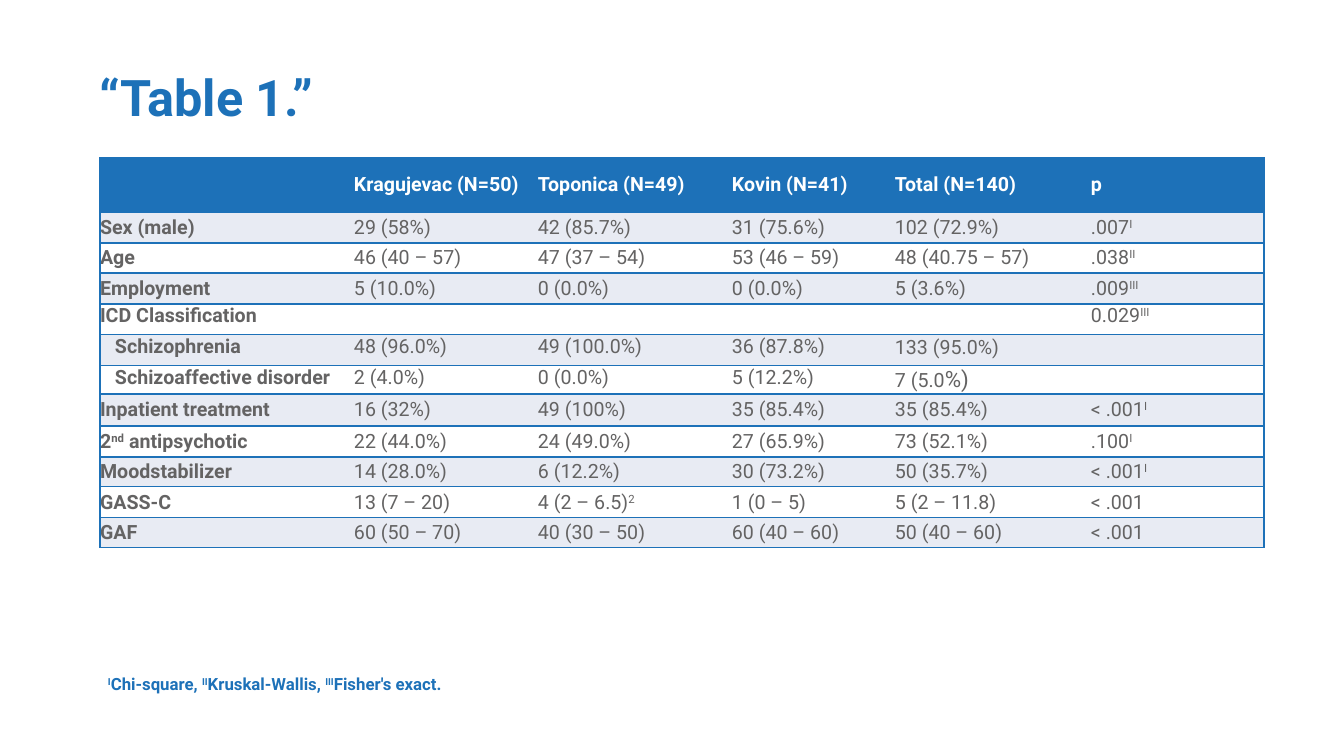
from dataclasses import dataclass

from lxml import etree
from pptx import Presentation
from pptx.dml.color import RGBColor
from pptx.enum.text import MSO_ANCHOR
from pptx.oxml.ns import qn
from pptx.util import Emu, Pt

TOP = MSO_ANCHOR.TOP
MIDDLE = MSO_ANCHOR.MIDDLE

EMU_PER_PX = 914400 / 100.8
FONT = "Roboto"
BLUE = "1D71B8"
GREY = "646363"
WHITE = "FFFFFF"
PALE = "E8EBF3"
SUPERSCRIPT = "^"
ENLARGED = "|"


@dataclass(frozen=True)
class Measure:
    label: str
    values: tuple[str, ...]
    height: int
    anchor: MSO_ANCHOR = MIDDLE
    indent: int = 0


COLUMN_WIDTHS = (254, 184, 194, 162, 197, 173)
TOTAL_COLUMN = 4

MEASURES = (
    Measure("", ("Kragujevac (N=50)", "Toponica (N=49)", "Kovin (N=41)", "Total (N=140)", "p"), 54),
    Measure("Sex (male)", ("29 (58%)", "42 (85.7%)", "31 (75.6%)", "102 (72.9%)", ".007^I"), 31),
    Measure("Age", ("46 (40 – 57)", "47 (37 – 54)", "53 (46 – 59)", "48 (40.75 – 57)", ".038^II"), 30),
    Measure("Employment", ("5 (10.0%)", "0 (0.0%)", "0 (0.0%)", "5 (3.6%)", ".009^III"), 31),
    Measure("ICD Classification", ("", "", "", "", "0.029^III"), 31, TOP),
    Measure("Schizophrenia", ("48 (96.0%)", "49 (100.0%)", "36 (87.8%)", "133 (95.0%)", ""), 31, TOP, 15),
    Measure("Schizoaffective disorder", ("2 (4.0%)", "0 (0.0%)", "5 (12.2%)", "7 (5.0|%)", ""), 28, TOP, 15),
    Measure("Inpatient treatment", ("16 (32%)", "49 (100%)", "35 (85.4%)", "35 (85.4%)", "< .001^I"), 32),
    Measure("2^nd^ antipsychotic", ("22 (44.0%)", "24 (49.0%)", "27 (65.9%)", "73 (52.1%)", ".100^I"), 31),
    Measure("Moodstabilizer", ("14 (28.0%)", "6 (12.2%)", "30 (73.2%)", "50 (35.7%)", "< .001^I"), 30),
    Measure("GASS-C", ("13 (7 – 20)", "4 (2 – 6.5)^2", "1 (0 – 5)", "5 (2 – 11.8)", "< .001"), 31),
    Measure("GAF", ("60 (50 – 70)", "40 (30 – 50)", "60 (40 – 60)", "50 (40 – 60)", "< .001"), 30),
)


def px(length: int) -> Emu:
    return Emu(round(length * EMU_PER_PX))


def rgb(value: str) -> RGBColor:
    return RGBColor.from_string(value)


def write(frame, text: str, *, size: int, color: str, bold: bool = False,
          line_spacing: float = 1.0) -> None:
    paragraph = frame.paragraphs[0]
    paragraph.line_spacing = line_spacing
    regular, _, enlarged = text.partition(ENLARGED)
    for section, section_size in ((regular, size), (enlarged, size + 2)):
        for index, wording in enumerate(section.split(SUPERSCRIPT)):
            if not wording:
                continue
            run = paragraph.add_run()
            run.text = wording
            run.font.name = FONT
            run.font.size = Pt(section_size)
            run.font.bold = bold
            run.font.color.rgb = rgb(color)
            if index % 2:
                run.font._element.set("baseline", "30000")
    if not text:
        etree.SubElement(paragraph._p, qn("a:endParaRPr"), sz=str(size * 100))


def add_text(slide, box: tuple[int, int, int, int], text: str, *, size: int) -> None:
    frame = slide.shapes.add_textbox(*map(px, box)).text_frame
    frame.word_wrap = True
    frame.margin_left = frame.margin_top = frame.margin_right = frame.margin_bottom = 0
    write(frame, text, size=size, color=BLUE, bold=True, line_spacing=0.9)


def set_borders(cell, visible: dict[str, bool]) -> None:
    properties = cell._tc.get_or_add_tcPr()
    for side, shown in visible.items():
        line = etree.SubElement(properties, qn(f"a:ln{side}"), w=str(Pt(1)))
        if shown:
            fill = etree.SubElement(line, qn("a:solidFill"))
            etree.SubElement(fill, qn("a:srgbClr"), val=BLUE)
        else:
            etree.SubElement(line, qn("a:noFill"))


def add_measures(slide, left: int, top: int) -> None:
    height = sum(measure.height for measure in MEASURES)
    table = slide.shapes.add_table(
        len(MEASURES), len(COLUMN_WIDTHS),
        px(left), px(top), px(sum(COLUMN_WIDTHS)), px(height),
    ).table
    table.horz_banding = False
    for column, width in zip(table.columns, COLUMN_WIDTHS):
        column.width = px(width)
    last_column = len(COLUMN_WIDTHS) - 1
    for row_index, measure in enumerate(MEASURES):
        table.rows[row_index].height = px(measure.height)
        heading = row_index == 0
        background = BLUE if heading else (PALE if row_index % 2 else WHITE)
        for column_index, text in enumerate((measure.label, *measure.values)):
            cell = table.cell(row_index, column_index)
            inset = px(1 if column_index == TOTAL_COLUMN else 0)
            cell.margin_left = cell.margin_top = cell.margin_right = cell.margin_bottom = inset
            if column_index == 0:
                cell.margin_left = px(measure.indent)
            cell.vertical_anchor = measure.anchor
            set_borders(cell, {"L": column_index == 0, "R": column_index == last_column,
                               "T": True, "B": True})
            cell.fill.solid()
            cell.fill.fore_color.rgb = rgb(background)
            write(cell.text_frame, text, size=14, color=WHITE if heading else GREY,
                  bold=heading or column_index == 0)


def main() -> None:
    presentation = Presentation()
    presentation.slide_width = px(1344)
    presentation.slide_height = px(756)
    slide = presentation.slides.add_slide(presentation.slide_layouts[6])
    add_measures(slide, 100, 158)
    add_text(slide, (108, 676, 950, 74),
             "^I^Chi-square, ^II^Kruskal-Wallis, ^III^Fisher's exact.", size=12)
    add_text(slide, (100, 73, 950, 55), "“Table 1.”", size=36)
    presentation.save("out.pptx")


if __name__ == "__main__":
    main()
